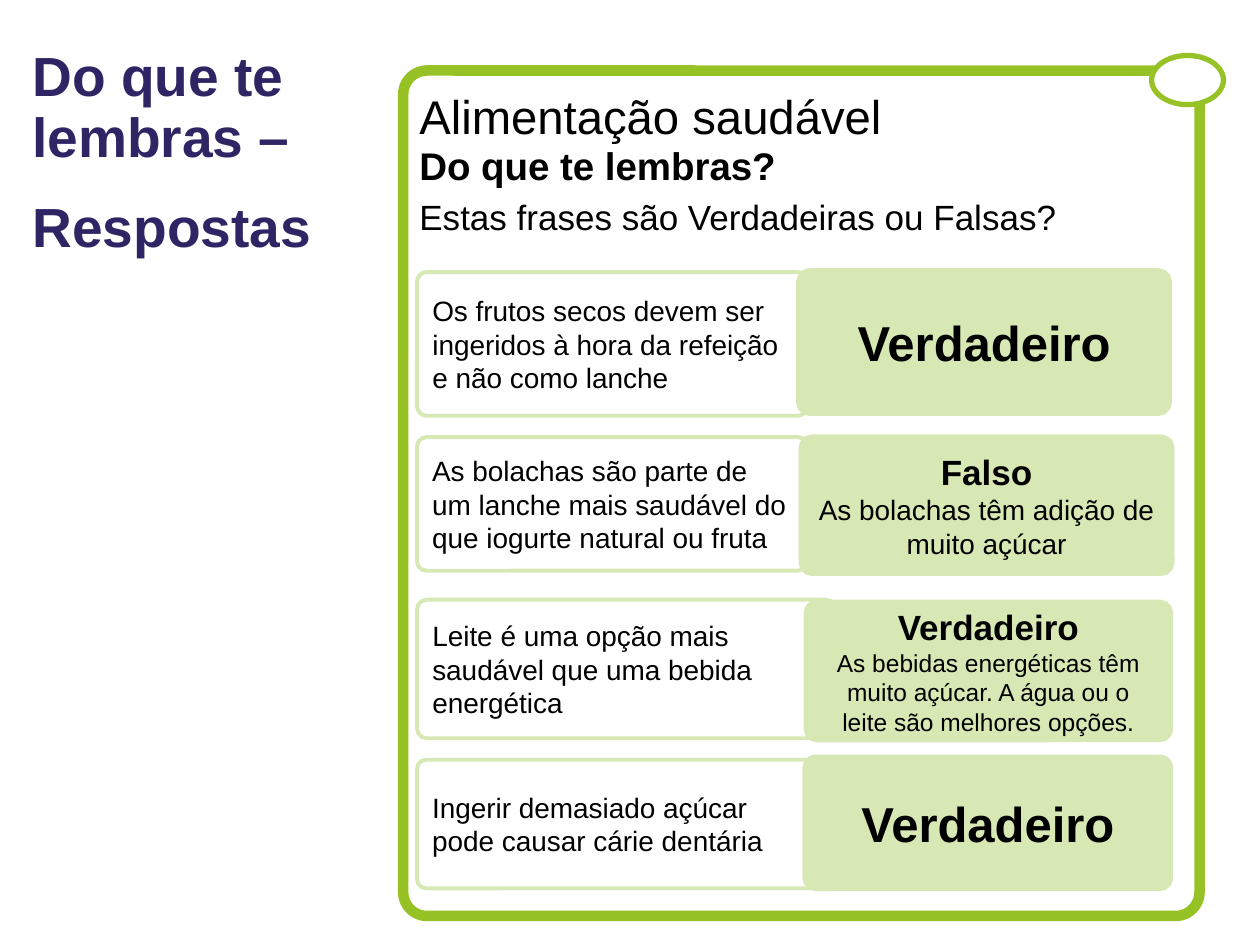
from pptx import Presentation
from pptx.dml.color import RGBColor
from pptx.enum.shapes import MSO_SHAPE as Shape
from pptx.enum.text import MSO_ANCHOR as Anchor, PP_ALIGN as Align
from pptx.util import Inches, Pt

COLS, ROWS = 100, 75
WIDE, HIGH = Inches(10), Inches(7.5)
GREEN, PALE, NAVY, BLACK, WHITE = "96C225", "D7E8B5", "302564", "000000", "FFFFFF"

# Per row: statement, its top, width and height; answer, its left, top, width and height
PAIRS = [
    (["Os frutos secos devem ser ingeridos à hora da refeição e não como lanche"],
     (21.6, 31, 11.4),
     [("Verdadeiro", 28, True)], (63.5, 21.6, 29.2, 11.1)),
    (["As bolachas são parte de um lanche mais saudável do que iogurte natural ou fruta"],
     (34.7, 31, 10.6),
     [("Falso", 20, True), ("As bolachas têm adição de muito açúcar", 16, False)],
     (63.7, 34.8, 29.2, 10.6)),
    (["Leite é uma opção mais", "saudável que uma bebida energética"],
     (47.6, 33.2, 11),
     [("Verdadeiro", 20, True),
      ("As bebidas energéticas têm muito açúcar. A água ou o leite são melhores opções.",
       14, False)],
     (64.1, 47.9, 28.7, 10.7)),
    (["Ingerir demasiado açúcar", "pode causar cárie dentária"],
     (60.3, 33.2, 10.2),
     [("Verdadeiro", 28, True)], (64, 60.2, 28.8, 10.2)),
]


def color(code):
    return RGBColor.from_string(code)


def place(col, row, cols, rows):
    """Turn grid units into slide lengths."""
    return (int(WIDE * col / COLS), int(HIGH * row / ROWS),
            int(WIDE * cols / COLS), int(HIGH * rows / ROWS))


def write(frame, lines, ink=BLACK, align=Align.LEFT, anchor=Anchor.TOP):
    """Fill a text frame with (text, size, bold) lines."""
    frame.word_wrap = True
    frame.vertical_anchor = anchor
    for i, (text, size, bold) in enumerate(lines):
        para = frame.paragraphs[0] if i == 0 else frame.add_paragraph()
        para.text = text
        para.alignment = align
        font = para.font
        font.name, font.size, font.bold = "Arial", Pt(size), bold
        font.color.rgb = color(ink)


def add_text(slide, spot, lines, **style):
    frame = slide.shapes.add_textbox(*place(*spot)).text_frame
    write(frame, lines, **style)
    return frame


def add_box(slide, kind, spot, line, width, fill=None, bend=None):
    box = slide.shapes.add_shape(kind, *place(*spot))
    box.shadow.inherit = False
    if bend is not None:
        box.adjustments[0] = bend
    if fill:
        box.fill.solid()
        box.fill.fore_color.rgb = color(fill)
    else:
        box.fill.background()
    box.line.color.rgb = color(line)
    box.line.width = Pt(width)
    return box


def add_title(slide):
    frame = add_text(slide, (1.6, 5.6, 42.2, 13.1),
                     [("Do que te\vlembras –", 31.5, True), ("Respostas", 31.5, True)],
                     ink=NAVY, anchor=Anchor.MIDDLE)
    for para in frame.paragraphs:
        para.line_spacing = 0.93
    frame.paragraphs[1].space_before = Pt(16)


def add_pair(slide, claim, size, reply, spot):
    """Draw a statement and the answer that overlaps its right end."""
    top, cols, rows = size
    left = add_box(slide, Shape.ROUNDED_RECTANGLE, (33.1, top, cols, rows),
                   PALE, 2.25, bend=0.07)
    write(left.text_frame, [(text, 16, False) for text in claim], anchor=Anchor.MIDDLE)
    right = add_box(slide, Shape.ROUNDED_RECTANGLE, spot, PALE, 4.5, PALE, 0.07)
    write(right.text_frame, reply, align=Align.CENTER, anchor=Anchor.MIDDLE)


def main():
    deck = Presentation()
    deck.slide_width, deck.slide_height = WIDE, HIGH
    slide = deck.slides.add_slide(deck.slide_layouts[6])
    add_title(slide)
    add_text(slide, (32.3, 6.4, 43.6, 5.6), [("Alimentação saudável", 27, False)])
    add_text(slide, (32.3, 10.8, 57, 4.7), [("Do que te lembras?", 22, True)])
    add_text(slide, (32.3, 15, 59.5, 4.4),
             [("Estas frases são Verdadeiras ou Falsas?", 20, False)])
    for pair in PAIRS:
        add_pair(slide, *pair)
    add_box(slide, Shape.ROUNDED_RECTANGLE, (32, 5.6, 63.2, 67.1), GREEN, 6, bend=0.03)
    add_box(slide, Shape.OVAL, (91.4, 4.4, 5.7, 3.9), GREEN, 3, WHITE)
    deck.save("out.pptx")


if __name__ == "__main__":
    main()
